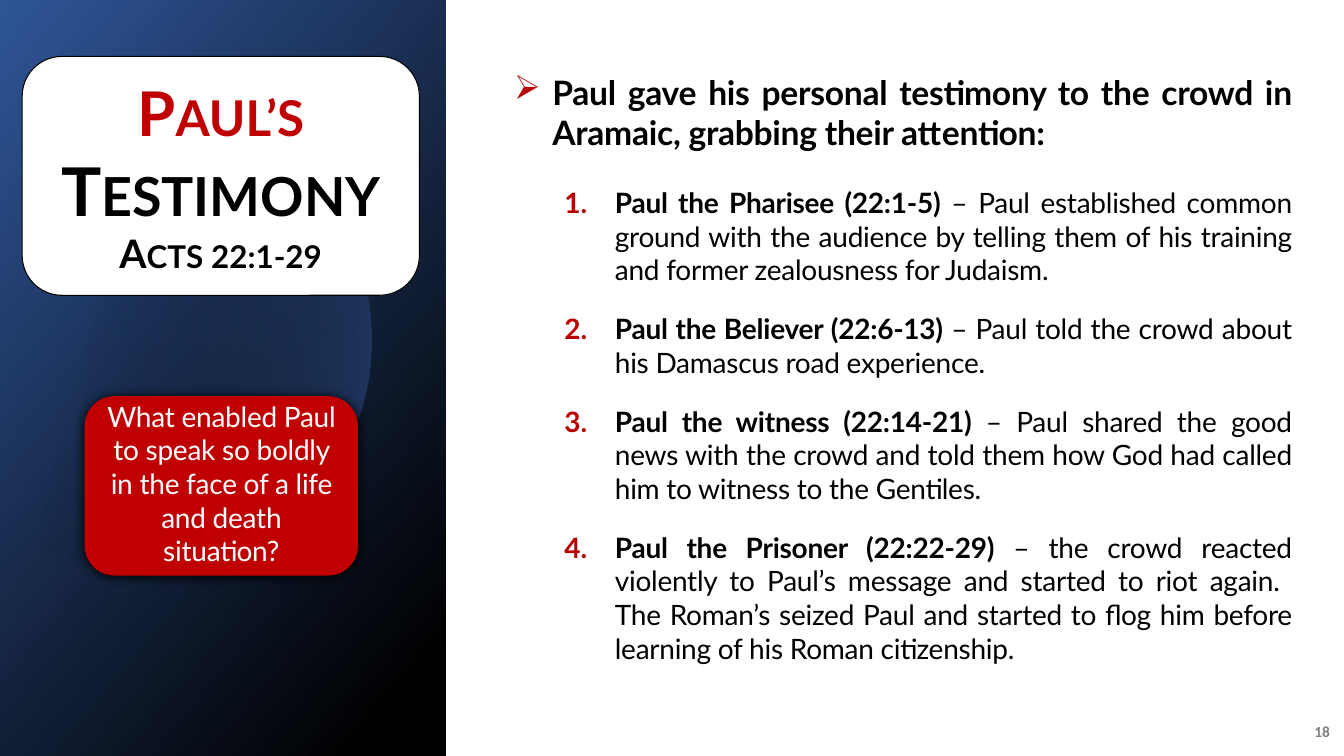
import math

from lxml import etree
from pptx import Presentation
from pptx import util as u
from pptx.dml.color import RGBColor
from pptx.enum import shapes, text
from pptx.oxml.ns import qn

PX = 9144
RED, BLACK, WHITE = "C00000", "000000", "FFFFFF"
BULLET_RED = "B90000"

POINTS = [
    ("Paul the Pharisee (22:1-5)", " – Paul established common ground with the audience by telling "
     "them of his training and former zealousness for Judaism."),
    ("Paul the Believer (22:6-13)", " – Paul told the crowd about his Damascus road experience."),
    ("Paul the witness (22:14-21)", " – Paul shared the good news with the crowd and told them how "
     "God had called him to witness to the Gentiles."),
    ("Paul the Prisoner (22:22-29)", " – the crowd reacted violently to Paul’s message and started "
     "to riot again.  The Roman’s seized Paul and started to flog him before learning of his "
     "Roman citizenship."),
]


def px(length):
    """Turn px into EMU."""
    return u.Emu(round(length * PX))


def color(value):
    """Turn a hex string into a colour."""
    return RGBColor.from_string(value)


def apply(target, values):
    """Set every attribute in a dict of format values."""
    for name, value in values.items():
        setattr(target, name, value)


def add_child(parent, tag, **attributes):
    """Append a DrawingML element with the given attributes."""
    child = etree.SubElement(parent, qn(tag))
    for name, value in attributes.items():
        child.set(name, str(value))
    return child


def add_run(paragraph, content, size, ink, bold=False, font="Lato", **attributes):
    """Add a formatted run, with extra run attributes such as spc or cap."""
    run = paragraph.add_run()
    run.text = content
    apply(run.font, {"size": u.Pt(size), "bold": bold, "name": font})
    run.font.color.rgb = color(ink)
    for name, value in attributes.items():
        run.font._element.set(name, str(value))


def prepare_frame(shape, anchor, insets=(10, 5, 10, 5)):
    """Set wrapping, anchor and insets, and return the first paragraph."""
    frame = shape.text_frame
    left, top, right, bottom = map(px, insets)
    apply(frame, {"word_wrap": True, "vertical_anchor": anchor, "margin_left": left,
                  "margin_top": top, "margin_right": right, "margin_bottom": bottom})
    return frame.paragraphs[0]


def add_rounded(slide, box, fill):
    """Add a plain rounded rectangle without line or shadow."""
    shape = slide.shapes.add_shape(shapes.MSO_SHAPE.ROUNDED_RECTANGLE, *map(px, box))
    shape.shadow.inherit = False
    shape.fill.solid()
    shape.fill.fore_color.rgb = color(fill)
    shape.line.fill.background()
    return shape


def fill_gradient(shape, stops, angle):
    """Fill with two stops of position, colour and opacity in percent."""
    shape.shadow.inherit = False
    shape.line.fill.background()
    shape.fill.gradient()
    shape.fill.gradient_angle = angle
    for stop, (position, ink, opacity) in zip(shape.fill.gradient_stops, stops):
        stop.color.rgb = color(ink)
        stop.position = position / 100
    for element, (_, _, opacity) in zip(shape._element.iter(qn("a:srgbClr")), stops):
        if opacity < 100:
            add_child(element, "a:alpha", val=opacity * 1000)


def add_side_panel(slide, box):
    """Draw the dark panel with a translucent disc cut at its left edge."""
    left, top, width, height = box
    panel = slide.shapes.add_shape(shapes.MSO_SHAPE.RECTANGLE, *map(px, box))
    fill_gradient(panel, [(0, "2F5597", 100), (92, BLACK, 100)], 320)

    offset, radius, steps = 140, 228, 120
    center_x, center_y = left + offset, top + 338
    limit = math.acos(-offset / radius)
    angles = [limit * (2 * step / steps - 1) for step in range(steps + 1)]
    outline = [(px(center_x + radius * math.cos(angle)), px(center_y + radius * math.sin(angle)))
               for angle in angles]
    builder = slide.shapes.build_freeform(*outline[0])
    builder.add_line_segments(outline[1:], close=True)
    fill_gradient(builder.convert_to_shape(), [(29, BLACK, 0), (100, "4472C4", 43)], 346)


def add_title_card(slide, box):
    """Draw the white card with the title and the passage."""
    card = add_rounded(slide, box, WHITE)
    card.line.color.rgb = color(BLACK)
    card.line.width = u.Pt(0.75)
    paragraph = prepare_frame(card, text.MSO_ANCHOR.MIDDLE, (0, 0, 0, 0))
    apply(paragraph, {"alignment": text.PP_ALIGN.CENTER, "space_after": u.Pt(6)})
    add_run(paragraph, "Paul’s ", 44, RED, True, cap="small")
    add_run(paragraph, "Testimony", 48, BLACK, True, cap="small")
    paragraph.add_line_break()
    add_run(paragraph, "Acts 22:1-29", 28, BLACK, True, cap="small")


def add_question(slide, box):
    """Draw the red question card with its soft shadow."""
    card = add_rounded(slide, box, RED)
    effects = card._element.spPr.find(qn("a:effectLst"))
    shadow = add_child(effects, "a:outerShdw", blurRad=u.Pt(8.5), dist=u.Pt(1),
                       dir=5400000, algn="t", rotWithShape=0)
    add_child(shadow, "a:srgbClr", val=BLACK)
    paragraph = prepare_frame(card, text.MSO_ANCHOR.MIDDLE, (10, 0, 10, 5))
    paragraph.alignment = text.PP_ALIGN.CENTER
    add_run(paragraph, "What enabled Paul to speak so boldly in the face of a life and death "
            "situation?", 20, WHITE, spc=-20)


def format_item(paragraph, margin, hang, after, bullet, **marker):
    """Give a paragraph its red marker, hanging indent and spacing."""
    properties = paragraph._element.get_or_add_pPr()
    properties.set("marL", str(px(margin)))
    properties.set("indent", str(-px(hang)))
    add_child(add_child(properties, "a:buClr"), "a:srgbClr", val=BULLET_RED)
    add_child(properties, bullet, **marker)
    add_child(add_child(properties, "a:tabLst"), "a:tab", pos=px(25), algn="l")
    apply(paragraph, {"alignment": text.PP_ALIGN.JUSTIFY, "space_after": u.Pt(after)})


def add_outline(slide, box):
    """Write the lead statement and the numbered points."""
    outline = slide.shapes.add_textbox(*map(px, box))
    lead = prepare_frame(outline, text.MSO_ANCHOR.TOP)
    format_item(lead, 38, 38, 24, "a:buChar", char="➢")
    add_run(lead, "Paul gave his personal testimony to the crowd in Aramaic, grabbing their "
            "attention:", 24, BLACK, True, spc=-20)
    for heading, detail in POINTS:
        point = outline.text_frame.add_paragraph()
        point.level = 1
        format_item(point, 100, 50, 18, "a:buAutoNum", type="arabicPeriod")
        add_run(point, heading, 20, BLACK, True, spc=-20)
        add_run(point, detail, 20, BLACK, spc=-20)


def add_page_number(slide, box):
    """Write the page number in the corner."""
    number = slide.shapes.add_textbox(*map(px, box))
    paragraph = prepare_frame(number, text.MSO_ANCHOR.MIDDLE)
    apply(paragraph, {"alignment": text.PP_ALIGN.RIGHT, "space_after": u.Pt(6)})
    add_run(paragraph, "18", 11, "808080", True, "Calibri")


def main():
    """Build the slide and save it."""
    presentation = Presentation()
    apply(presentation, {"slide_width": px(1333), "slide_height": px(750)})
    slide = presentation.slides.add_slide(presentation.slide_layouts[6])
    add_page_number(slide, (1280, 706, 49, 40))
    add_side_panel(slide, (0, 0, 442, 750))
    add_title_card(slide, (22, 56, 394, 237))
    add_outline(slide, (500, 66, 791, 604))
    add_question(slide, (84, 393, 271, 178))
    presentation.save("out.pptx")


if __name__ == "__main__":
    main()
